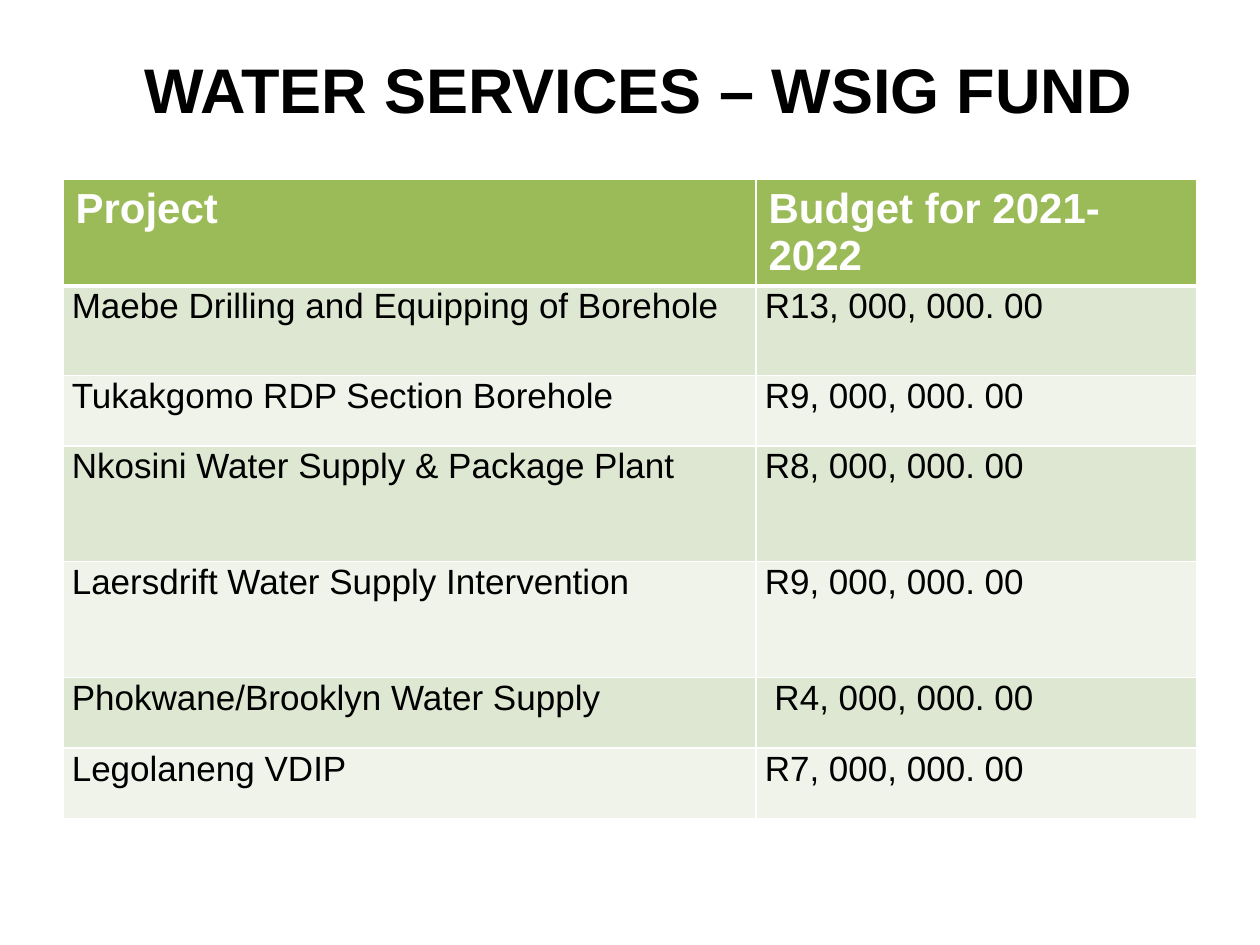
import pptx
import pptx.util
import pptx.dml.color
import pptx.enum.text
import pptx.oxml.ns
from lxml import etree

COLORS = {"text": "000000", "white": "FFFFFF", "header": "9BBB59",
          "odd": "DEE7D1", "even": "EFF3EA"}

PROJECTS = [
    ("Maebe Drilling and Equipping of Borehole", "R13, 000, 000. 00", 0.71),
    ("Tukakgomo RDP Section Borehole", "R9, 000, 000. 00", 0.56),
    ("Nkosini Water Supply & Package Plant", "R8, 000, 000. 00", 0.92),
    ("Laersdrift Water Supply Intervention", "R9, 000, 000. 00", 0.92),
    ("Phokwane/Brooklyn Water Supply", " R4, 000, 000. 00", 0.56),
    ("Legolaneng VDIP", "R7, 000, 000. 00", 0.56),
]


class Deck:
    """Holds the style and current slide; positions are shares of the slide size."""

    font = "Arial"

    def __init__(self, width, height):
        self.prs = pptx.Presentation()
        self.prs.slide_width = pptx.util.Inches(width)
        self.prs.slide_height = pptx.util.Inches(height)
        self.slide = self.prs.slides.add_slide(self.prs.slide_layouts[5])

    def box(self, left, top, width, height):
        w, h = self.prs.slide_width, self.prs.slide_height
        return int(left * w), int(top * h), int(width * w), int(height * h)

    def text(self, tf, text, size, color, bold):
        tf.text = text
        for r in tf.paragraphs[0].runs:
            r.font.name = self.font
            r.font.size = pptx.util.Pt(size)
            r.font.bold = bold
            r.font.color.rgb = pptx.dml.color.RGBColor.from_string(COLORS[color])

    def title(self, text, *shares):
        sp = self.slide.shapes.title
        sp.left, sp.top, sp.width, sp.height = self.box(*shares)
        tf = sp.text_frame
        self.text(tf, text, 36, "text", True)
        tf.auto_size = pptx.enum.text.MSO_AUTO_SIZE.NONE
        tf.vertical_anchor = pptx.enum.text.MSO_ANCHOR.MIDDLE
        tf.margin_bottom = pptx.util.Inches(0.15)
        tf.paragraphs[0].alignment = pptx.enum.text.PP_ALIGN.CENTER

    def borders(self, cell, widths):
        tc_pr = cell._tc.get_or_add_tcPr()
        for side, width in zip("LRTB", widths):
            ln = etree.SubElement(tc_pr, pptx.oxml.ns.qn(f"a:ln{side}"),
                                  w=str(pptx.util.Pt(width)))
            fill = etree.SubElement(ln, pptx.oxml.ns.qn("a:solidFill"))
            etree.SubElement(fill, pptx.oxml.ns.qn("a:srgbClr"), val=COLORS["white"])

    def cell(self, cell, text, row):
        header = row == 0
        self.borders(cell, (1, 1, 3 if row == 1 else 1, 3 if header else 1))
        fill = "header" if header else "odd" if row % 2 else "even"
        cell.fill.solid()
        cell.fill.fore_color.rgb = pptx.dml.color.RGBColor.from_string(COLORS[fill])
        if header:
            self.text(cell.text_frame, text, 24, "white", True)
        else:
            self.text(cell.text_frame, text, 20, "text", False)
            cell.margin_left = cell.margin_right = pptx.util.Inches(0.07)
            cell.margin_top = cell.margin_bottom = 0
            cell.text_frame.paragraphs[0].line_spacing = 1.03

    def table(self, rows, widths, heights, *shares):
        frame = self.slide.shapes.add_table(len(rows), len(widths), *self.box(*shares))
        table = frame.table
        for column, width in zip(table.columns, widths):
            column.width = pptx.util.Inches(width)
        for i, (texts, height) in enumerate(zip(rows, heights)):
            table.rows[i].height = pptx.util.Inches(height)
            for j, text in enumerate(texts):
                self.cell(table.cell(i, j), text, i)


def main():
    deck = Deck(10, 7.5)
    deck.title(" WATER SERVICES – WSIG FUND", 0.05, 0.04, 0.9, 0.12)
    rows = [("Project", "Budget for 2021-2022")] + [p[:2] for p in PROJECTS]
    heights = [0.69] + [p[2] for p in PROJECTS]
    deck.table(rows, (5.5, 3.5), heights, 0.05, 0.19, 0.9, sum(heights) / 7.5)
    deck.prs.save("out.pptx")


if __name__ == "__main__":
    main()
